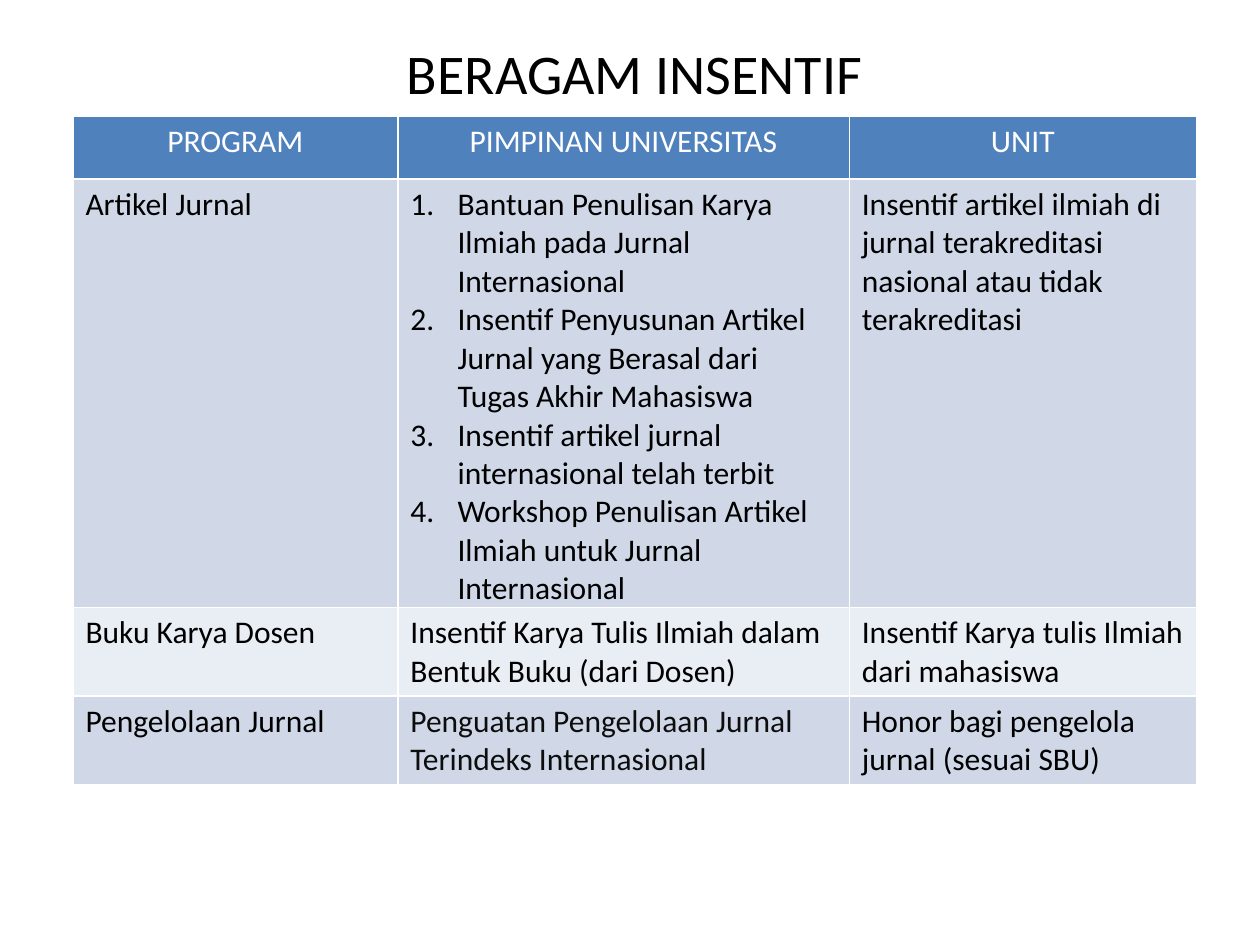
from dataclasses import dataclass

from lxml.etree import SubElement
from pptx import Presentation
from pptx.dml.color import RGBColor
from pptx.enum.text import MSO_ANCHOR, PP_ALIGN
from pptx.oxml.ns import qn
from pptx.util import Cm, Pt


@dataclass(frozen=True)
class Theme:
    font: str = "Calibri"
    title_size: float = 32
    table_size: float = 18
    text: str = "000000"
    soft_text: str = "0D0D0D"
    header_text: str = "FFFFFF"
    header_fill: str = "4F81BD"
    band_fills: tuple = ("D0D8E8", "E9EDF4")


THEME = Theme()

HEADERS = ["PROGRAM", "PIMPINAN UNIVERSITAS", "UNIT"]
PROGRAMS = [
    [
        "Artikel Jurnal",
        [
            "Bantuan Penulisan Karya Ilmiah pada Jurnal Internasional",
            "Insentif Penyusunan Artikel Jurnal yang Berasal dari Tugas Akhir Mahasiswa",
            "Insentif artikel jurnal internasional telah terbit",
            "Workshop Penulisan Artikel Ilmiah untuk Jurnal Internasional",
        ],
        "Insentif artikel ilmiah di jurnal terakreditasi nasional atau tidak terakreditasi",
    ],
    [
        "Buku Karya Dosen",
        "Insentif Karya Tulis Ilmiah dalam Bentuk Buku (dari Dosen)",
        "Insentif Karya tulis Ilmiah dari mahasiswa",
    ],
    [
        "Pengelolaan Jurnal",
        "Penguatan Pengelolaan Jurnal Terindeks Internasional",
        "Honor bagi pengelola jurnal (sesuai SBU)",
    ],
]
SOFT_CELL = (3, 1)
COLUMN_WIDTHS = [6.55, 9.1, 7]
ROW_HEIGHTS = [1.27, 8.64, 1.78, 1.78]


def style_paragraph(para, size, color, align=PP_ALIGN.LEFT):
    para.alignment = align
    para.font.name = THEME.font
    para.font.size = Pt(size)
    para.font.bold = False
    para.font.color.rgb = RGBColor.from_string(color)


def number_paragraph(para, indent=Cm(0.95)):
    properties = para._p.get_or_add_pPr()
    properties.set("marL", str(indent))
    properties.set("indent", str(-indent))
    SubElement(properties, qn("a:buFont"), typeface="+mj-lt")
    SubElement(properties, qn("a:buAutoNum"), type="arabicPeriod")


def fill_cell(cell, content, fill, color, align=PP_ALIGN.LEFT):
    """Write a plain text, or a list of texts as a numbered list."""
    cell.fill.solid()
    cell.fill.fore_color.rgb = RGBColor.from_string(fill)
    numbered = isinstance(content, list)
    cell.text = "\n".join(content) if numbered else content
    for para in cell.text_frame.paragraphs:
        if numbered:
            number_paragraph(para)
        style_paragraph(para, THEME.table_size, color, align)


def add_title(page, text, left, top, width, height):
    box = page.shapes.add_textbox(left, top, width, height)
    frame = box.text_frame
    frame.word_wrap = True
    frame.vertical_anchor = MSO_ANCHOR.MIDDLE
    frame.text = text
    style_paragraph(frame.paragraphs[0], THEME.title_size, THEME.text, PP_ALIGN.CENTER)


def add_incentive_table(page, left, top):
    table = page.shapes.add_table(
        len(ROW_HEIGHTS), len(COLUMN_WIDTHS), left, top,
        Cm(sum(COLUMN_WIDTHS)), Cm(sum(ROW_HEIGHTS)),
    ).table
    for column, width in zip(table.columns, COLUMN_WIDTHS):
        column.width = Cm(width)
    for row, height in zip(table.rows, ROW_HEIGHTS):
        row.height = Cm(height)

    for column, header in enumerate(HEADERS):
        fill_cell(table.cell(0, column), header, THEME.header_fill,
                  THEME.header_text, PP_ALIGN.CENTER)
    for row, program in enumerate(PROGRAMS, start=1):
        fill = THEME.band_fills[(row - 1) % 2]
        for column, content in enumerate(program):
            color = THEME.soft_text if (row, column) == SOFT_CELL else THEME.text
            fill_cell(table.cell(row, column), content, fill, color)


def main():
    deck = Presentation()
    deck.slide_width, deck.slide_height = Cm(25.4), Cm(19.05)
    page = deck.slides.add_slide(deck.slide_layouts[6])
    add_title(page, "BERAGAM INSENTIF", Cm(0.97), Cm(0.61), Cm(23.65), Cm(1.7))
    add_incentive_table(page, Cm(1.47), Cm(2.34))
    deck.save("out.pptx")


if __name__ == "__main__":
    main()
